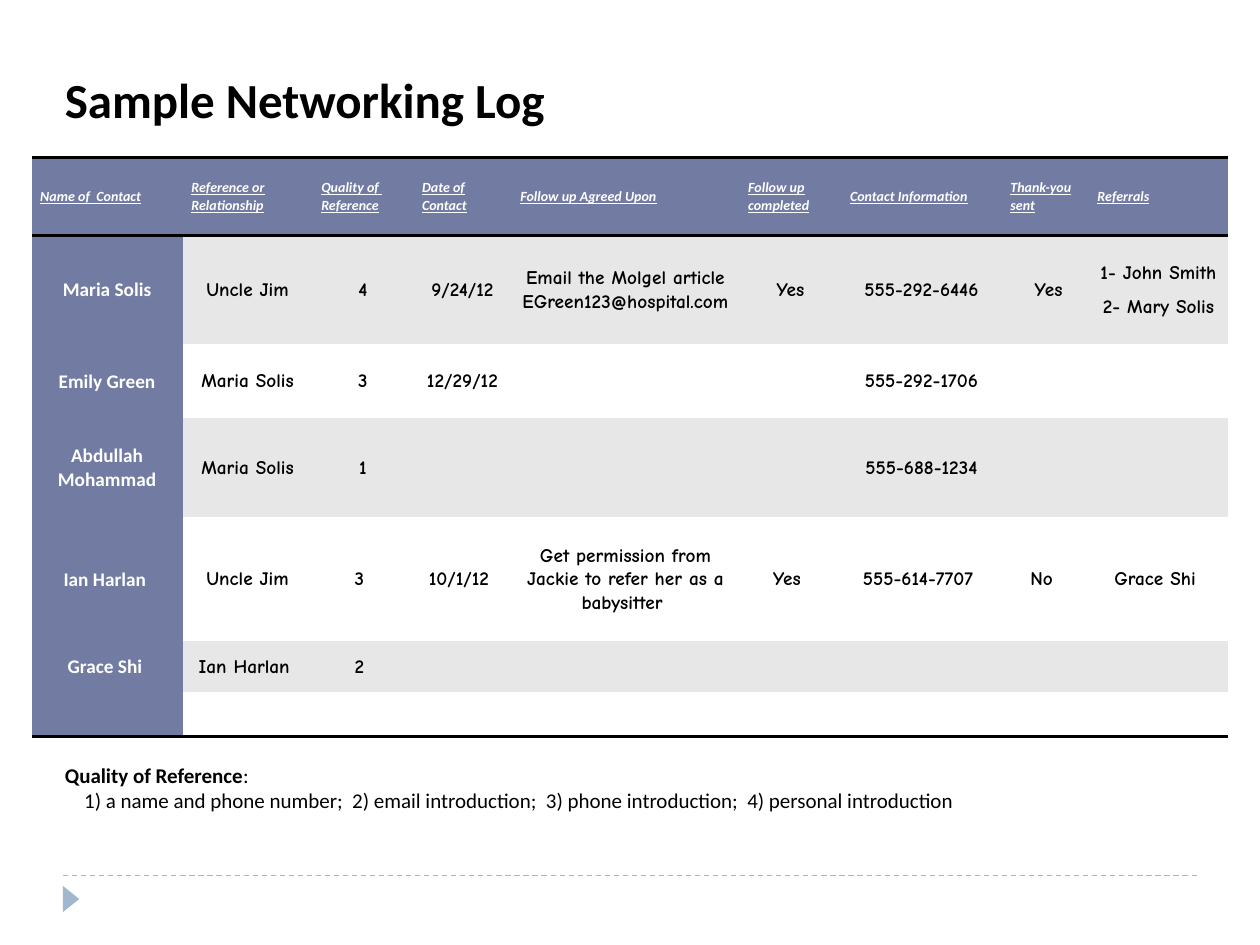
from lxml import etree
from pptx import Presentation
from pptx.dml.color import RGBColor
from pptx.enum.dml import MSO_LINE
from pptx.enum.shapes import MSO_CONNECTOR, MSO_SHAPE
from pptx.enum.text import MSO_ANCHOR, MSO_AUTO_SIZE, PP_ALIGN
from pptx.oxml.ns import qn
from pptx.util import Pt

MIDDLE = MSO_ANCHOR.MIDDLE
CENTER = PP_ALIGN.CENTER
DASH = MSO_LINE.DASH
LINE = MSO_CONNECTOR.STRAIGHT
ARROW = MSO_SHAPE.ISOSCELES_TRIANGLE
FIT = MSO_AUTO_SIZE.SHAPE_TO_FIT_TEXT

SANS, HAND = "Calibri", "Comic Neue"
BLACK, WHITE, GRAY = "000000", "FFFFFF", "E7E7E7"
SLATE, SKY = "727CA3", "9FB8CD"
PLAIN = "{2D5ABB26-0587-4C30-8999-92F81FD0307C}"

TITLE = "Sample Networking Log"
LABEL = "Quality of Reference"
SCALE = ("1) a name and phone number;  2) email introduction;  "
         "3) phone introduction;  4) personal introduction")
WIDTHS = [86.4, 74.2, 57.6, 56.2, 130.2, 58.2, 91.6, 49.8, 79.8]
HEIGHTS = [44.6, 61.9, 42.5, 56.2, 71.3, 28.8, 25.9]
ROWS = [
    ["Name of  Contact", "Reference or Relationship", "Quality of  Reference",
     "Date of Contact", "Follow up Agreed Upon", "Follow up completed",
     "Contact Information", "Thank-you sent", "Referrals"],
    ["Maria Solis", "Uncle Jim", "4", "9/24/12",
     "Email the Molgel article EGreen123@hospital.com", "Yes",
     "555-292-6446", " Yes", "1- John Smith\n2- Mary Solis"],
    ["Emily Green", "Maria Solis", "3", "12/29/12", "", "",
     "555-292-1706", "", ""],
    ["Abdullah Mohammad", "Maria Solis", "1", "", "", "",
     "555-688-1234", "", ""],
    ["Ian Harlan ", "Uncle Jim", "3 ", "10/1/12 ",
     "Get permission from Jackie to refer her as a babysitter ", "Yes ",
     "555-614-7707 ", "No ", "Grace Shi "],
    ["Grace Shi ", "Ian Harlan ", "2 ", "", "", "", "", "", ""],
    [""] * 9,
]


def rgb(code):
    return RGBColor.from_string(code)


def style(run, size, face=SANS, color=BLACK, bold=False):
    font = run.font
    font.size, font.name, font.bold = Pt(size), face, bold
    font.color.rgb = rgb(color)
    return font


def border(cell, side):
    props = cell._tc.get_or_add_tcPr()
    edge = etree.SubElement(props, qn("a:" + side), w=str(Pt(2)))
    fill = etree.SubElement(edge, qn("a:solidFill"))
    etree.SubElement(fill, qn("a:srgbClr"), val=BLACK)


def fill_cell(cell, text, row, col):
    head, side = row == 0, col == 0
    if head:
        border(cell, "lnT")
    if head or row == len(ROWS) - 1:
        border(cell, "lnB")
    cell.fill.solid()
    band = GRAY if row % 2 else WHITE
    cell.fill.fore_color.rgb = rgb(SLATE if head or side else band)
    cell.vertical_anchor = MIDDLE
    cell.margin_left = cell.margin_right = Pt(5)
    cell.margin_top = cell.margin_bottom = 0
    cell.text_frame.text = text
    for para in cell.text_frame.paragraphs:
        para.line_spacing, para.space_after = 1.05, Pt(6)
        if not head:
            para.alignment = CENTER
        for run in para.runs:
            if head:
                font = style(run, 8, color=WHITE, bold=True)
                font.italic = font.underline = True
            elif side:
                style(run, 11, color=WHITE, bold=True)
            else:
                style(run, 11, HAND, bold=True)


def add_log(slide):
    frame = slide.shapes.add_table(len(ROWS), len(WIDTHS), Pt(18), Pt(90),
                                   Pt(sum(WIDTHS)), Pt(sum(HEIGHTS)))
    table = frame.table
    table.first_row = table.horz_banding = False
    table._tbl.tblPr.find(qn("a:tableStyleId")).text = PLAIN
    for col, width in zip(table.columns, WIDTHS):
        col.width = Pt(width)
    for row, height in zip(table.rows, HEIGHTS):
        row.height = Pt(height)
    for r, texts in enumerate(ROWS):
        for c, text in enumerate(texts):
            fill_cell(table.cell(r, c), text, r, c)


def add_text(slide, top, width, height, text, wrap):
    box = slide.shapes.add_textbox(Pt(30), Pt(top), Pt(width), Pt(height))
    frame = box.text_frame
    frame.word_wrap, frame.auto_size = wrap, FIT
    frame.text = text
    return frame.paragraphs


def add_foot(slide):
    rule = slide.shapes.add_connector(LINE, Pt(36), Pt(500.4),
                                      Pt(684), Pt(500.4))
    rule.line.color.rgb = rgb(SKY)
    rule.line.width, rule.line.dash_style = Pt(0.75), DASH
    etree.SubElement(rule._element.spPr, qn("a:effectLst"))
    mark = slide.shapes.add_shape(ARROW, Pt(33.1), Pt(509), Pt(15), Pt(9.4))
    mark.rotation = 90
    mark.shadow.inherit = False
    mark.fill.solid()
    mark.fill.fore_color.rgb = rgb(SKY)
    mark.line.fill.background()


def main():
    deck = Presentation()
    deck.slide_width, deck.slide_height = Pt(720), Pt(540)
    slide = deck.slides.add_slide(deck.slide_layouts[6])
    add_foot(slide)
    add_log(slide)
    title = add_text(slide, 36, 335.5, 41, TITLE, False)[0]
    style(title.runs[0], 28, bold=True)
    label, scale = add_text(slide, 432, 660, 36, LABEL + "\n" + SCALE, True)
    style(label.runs[0], 12, bold=True)
    colon = label.add_run()
    colon.text = ":"
    style(colon, 12)
    style(scale.runs[0], 12)
    scale._p.get_or_add_pPr().set("marL", str(Pt(11)))
    deck.save("out.pptx")


if __name__ == "__main__":
    main()
